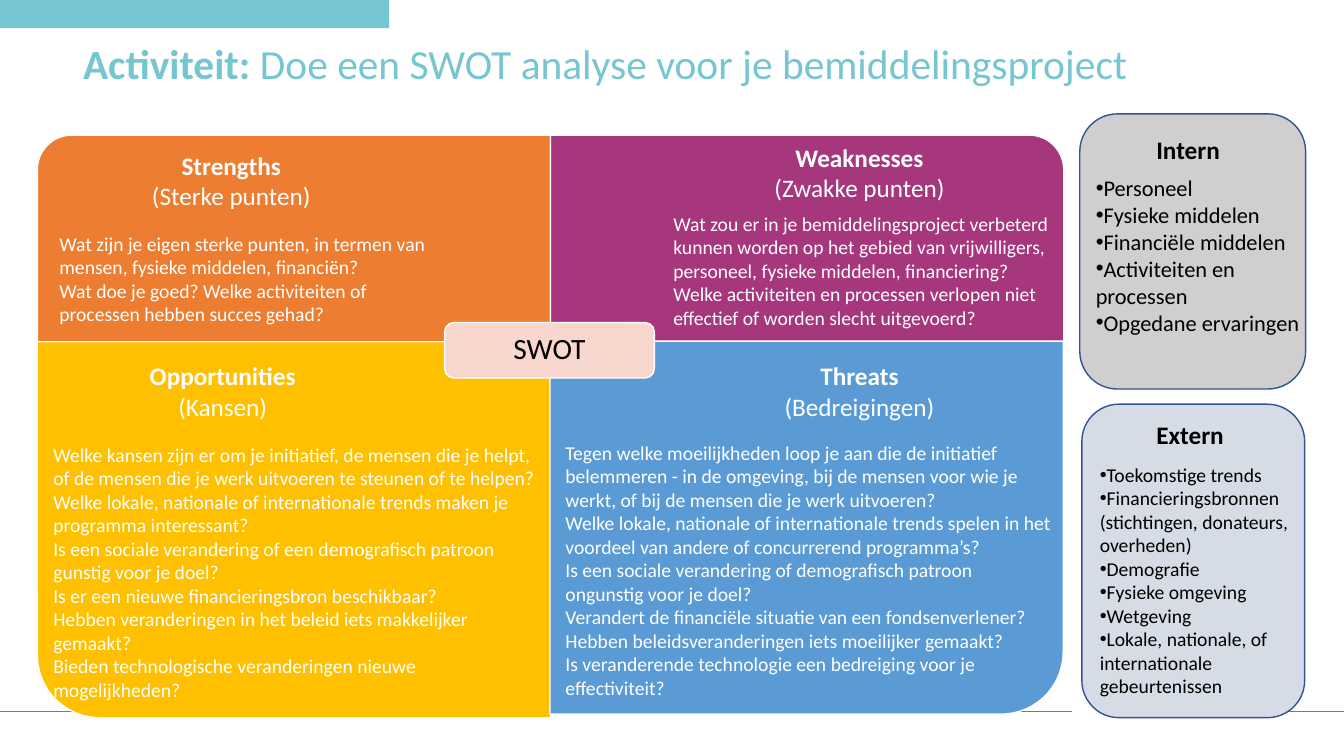
from dataclasses import dataclass

from lxml import etree
from pptx import Presentation
from pptx.dml.color import RGBColor
from pptx.enum.shapes import MSO_CONNECTOR, MSO_SHAPE
from pptx.enum.text import MSO_ANCHOR, MSO_AUTO_SIZE, PP_ALIGN
from pptx.oxml.ns import qn
from pptx.util import Emu, Pt

EMU_PER_PX = 9144  # 100 px to the inch


@dataclass(frozen=True)
class Theme:
    font: str = "Calibri"
    accent: str = "76C6D2"
    white: str = "FFFFFF"
    black: str = "000000"
    rule: str = "797979"
    strengths: str = "ED7D31"
    weaknesses: str = "A6377D"
    opportunities: str = "FFC000"
    threats: str = "5B9BD5"
    tag: str = "F8D7CE"
    intern: str = "D0CECE"
    extern: str = "D6DCE5"
    panel_line: str = "325491"
    title_size: float = 29.6
    tag_size: int = 21
    heading_size: int = 18
    list_size: int = 16
    body_size: int = 14


THEME = Theme()


def px(*values):
    return [Emu(v * EMU_PER_PX) for v in values]


def rgb(value):
    return RGBColor.from_string(value)


def format_run(r, size, color, bold=False):
    r.font.name = THEME.font
    r.font.size = Pt(size)
    r.font.bold = bold
    r.font.color.rgb = rgb(color)


def add_block(slide, preset, box, fill, line=None):
    sp = slide.shapes.add_shape(preset, *px(*box))
    sp.shadow.inherit = False
    sp.fill.solid()
    sp.fill.fore_color.rgb = rgb(fill)
    if line:
        sp.line.color.rgb = rgb(line)
        sp.line.width = Pt(1)
    else:
        sp.line.fill.background()
    return sp


def add_text(slide, box, lines, size, color, bold_first=False, wrap=True,
             align=PP_ALIGN.LEFT, bullets=False):
    tf = slide.shapes.add_textbox(*px(*box)).text_frame
    tf.word_wrap = wrap
    tf.auto_size = MSO_AUTO_SIZE.SHAPE_TO_FIT_TEXT
    for i, line in enumerate(lines):
        p = tf.paragraphs[0] if i == 0 else tf.add_paragraph()
        p.text = line
        p.alignment = align
        if bullets:
            pPr = p._p.get_or_add_pPr()
            pPr.set("marL", "0")
            pPr.set("indent", "0")
            etree.SubElement(pPr, qn("a:buFont")).set("typeface", "Arial")
            etree.SubElement(pPr, qn("a:buChar")).set("char", "•")
        format_run(p.runs[0], size, color, bold_first and i == 0)


def inside(box, offset):
    """Place an (dx, dy, width, height) offset within a box."""
    dx, dy, w, h = offset
    return box[0] + dx, box[1] + dy, w, h


def add_frame(slide, box):
    x, y, w, h = box
    # Corner band
    add_block(slide, MSO_SHAPE.RECTANGLE, (x, y, 386, 28), THEME.accent)
    # Footer rule, broken beneath the panels
    for start, end in ((x, 1063), (1271, x + w)):
        rule = slide.shapes.add_connector(
            MSO_CONNECTOR.STRAIGHT, *px(start, y + 706, end, y + 706))
        rule.line.color.rgb = rgb(THEME.rule)
        rule.line.width = Pt(0.5)
        etree.SubElement(rule._element.spPr, qn("a:effectLst"))


def add_title(slide, box, label, text):
    tf = slide.shapes.add_textbox(*px(*box)).text_frame
    tf.word_wrap = True
    p = tf.paragraphs[0]
    p.alignment = PP_ALIGN.RIGHT
    p.line_spacing = 0.9
    for part, bold in ((label, True), (text, False)):
        r = p.add_run()
        r.text = part
        format_run(r, THEME.title_size, THEME.accent, bold)


def add_quadrant(slide, box, fill, turn, heading, heading_at, body, body_at):
    x, y, w, h = box
    # A sideways turn swaps width and height around the same centre
    frame = box
    if turn % 180:
        frame = (x + (w - h) // 2, y + (h - w) // 2, h, w)
    sp = add_block(slide, MSO_SHAPE.ROUND_1_RECTANGLE, frame, fill, THEME.white)
    sp.rotation = turn
    add_text(slide, inside(box, heading_at), heading, THEME.heading_size,
             THEME.white, bold_first=True, wrap=False, align=PP_ALIGN.CENTER)
    add_text(slide, inside(box, body_at), body, THEME.body_size, THEME.white)


def add_tag(slide, box, text):
    sp = add_block(slide, MSO_SHAPE.ROUNDED_RECTANGLE, box, THEME.tag, THEME.white)
    tf = sp.text_frame
    tf.vertical_anchor = MSO_ANCHOR.MIDDLE
    tf.text = text
    p = tf.paragraphs[0]
    p.alignment = PP_ALIGN.CENTER
    p.line_spacing = 0.9
    format_run(p.runs[0], THEME.tag_size, THEME.black)


def add_panel(slide, box, fill, heading, heading_at, items, items_at, size):
    add_block(slide, MSO_SHAPE.ROUNDED_RECTANGLE, box, fill, THEME.panel_line)
    add_text(slide, inside(box, heading_at), [heading], THEME.heading_size,
             THEME.black, bold_first=True, wrap=False)
    add_text(slide, inside(box, items_at), items, size, THEME.black, bullets=True)


def add_swot(slide, box):
    x, y, w, h = box
    half, top = w // 2, 205
    low = h - top
    add_quadrant(
        slide, (x, y, half, top), THEME.strengths, 270,
        ["Strengths", "(Sterke punten)"], (101, 10, 183, 71),
        ["Wat zijn je eigen sterke punten, in termen van mensen, fysieke middelen, financiën?",
         "Wat doe je goed? Welke activiteiten of processen hebben succes gehad?"],
        (12, 91, 393, 104))
    add_quadrant(
        slide, (x + half, y, half, top), THEME.weaknesses, 0,
        ["Weaknesses", "(Zwakke punten)"], (211, 2, 191, 71),
        ["Wat zou er in je bemiddelingsproject verbeterd kunnen worden op het gebied van "
         "vrijwilligers, personeel, fysieke middelen, financiering?",
         "Welke activiteiten en processen verlopen niet effectief of worden slecht uitgevoerd?"],
        (112, 71, 414, 128))
    add_quadrant(
        slide, (x, y + top, half, low), THEME.opportunities, 180,
        ["Opportunities", "(Kansen)"], (101, 14, 166, 71),
        ["Welke kansen zijn er om je initiatief, de mensen die je helpt, of de mensen die je "
         "werk uitvoeren te steunen of te helpen?",
         "Welke lokale, nationale of internationale trends maken je programma interessant?",
         "Is een sociale verandering of een demografisch patroon gunstig voor je doel?",
         "Is er een nieuwe financieringsbron beschikbaar?",
         "Hebben veranderingen in het beleid iets makkelijker gemaakt?",
         "Bieden technologische veranderingen nieuwe mogelijkheden?"],
        (6, 95, 498, 269))
    add_quadrant(
        slide, (x + half, y + top, half, low - 3), THEME.threats, 90,
        ["Threats", "(Bedreigingen)"], (221, 14, 171, 71),
        ["Tegen welke moeilijkheden loop je aan die de initiatief belemmeren - in de omgeving, "
         "bij de mensen voor wie je werkt, of bij de mensen die je werk uitvoeren?",
         "Welke lokale, nationale of internationale trends spelen in het voordeel van andere of "
         "concurrerend programma’s?",
         "Is een sociale verandering of demografisch patroon ongunstig voor je doel?",
         "Verandert de financiële situatie van een fondsenverlener?",
         "Hebben beleidsveranderingen iets moeilijker gemaakt?",
         "Is veranderende technologie een bedreiging voor je effectiviteit?"],
        (5, 93, 504, 269))
    add_tag(slide, (x + half - 105, y + top - 19, 208, 55), "SWOT")


def main():
    prs = Presentation()
    prs.slide_width, prs.slide_height = px(1333, 750)
    slide = prs.slides.add_slide(prs.slide_layouts[6])

    add_frame(slide, (0, 0, 1333, 750))
    add_title(slide, (37, 38, 1092, 80), "Activiteit: ",
              "Doe een SWOT analyse voor je bemiddelingsproject")
    add_swot(slide, (37, 134, 1018, 578))

    # Side panels
    add_panel(slide, (1071, 113, 224, 273), THEME.intern, "Intern", (66, 15, 84, 40),
              ["Personeel", "Fysieke middelen", "Financiële middelen",
               "Activiteiten en processen", "Opgedane ervaringen"],
              (6, 55, 224, 172), THEME.list_size)
    add_panel(slide, (1073, 401, 221, 311), THEME.extern, "Extern", (64, 10, 88, 40),
              ["Toekomstige trends",
               "Financieringsbronnen (stichtingen, donateurs, overheden)",
               "Demografie", "Fysieke omgeving", "Wetgeving",
               "Lokale, nationale, of internationale gebeurtenissen"],
              (8, 53, 210, 246), THEME.body_size)

    prs.save("out.pptx")


if __name__ == "__main__":
    main()
